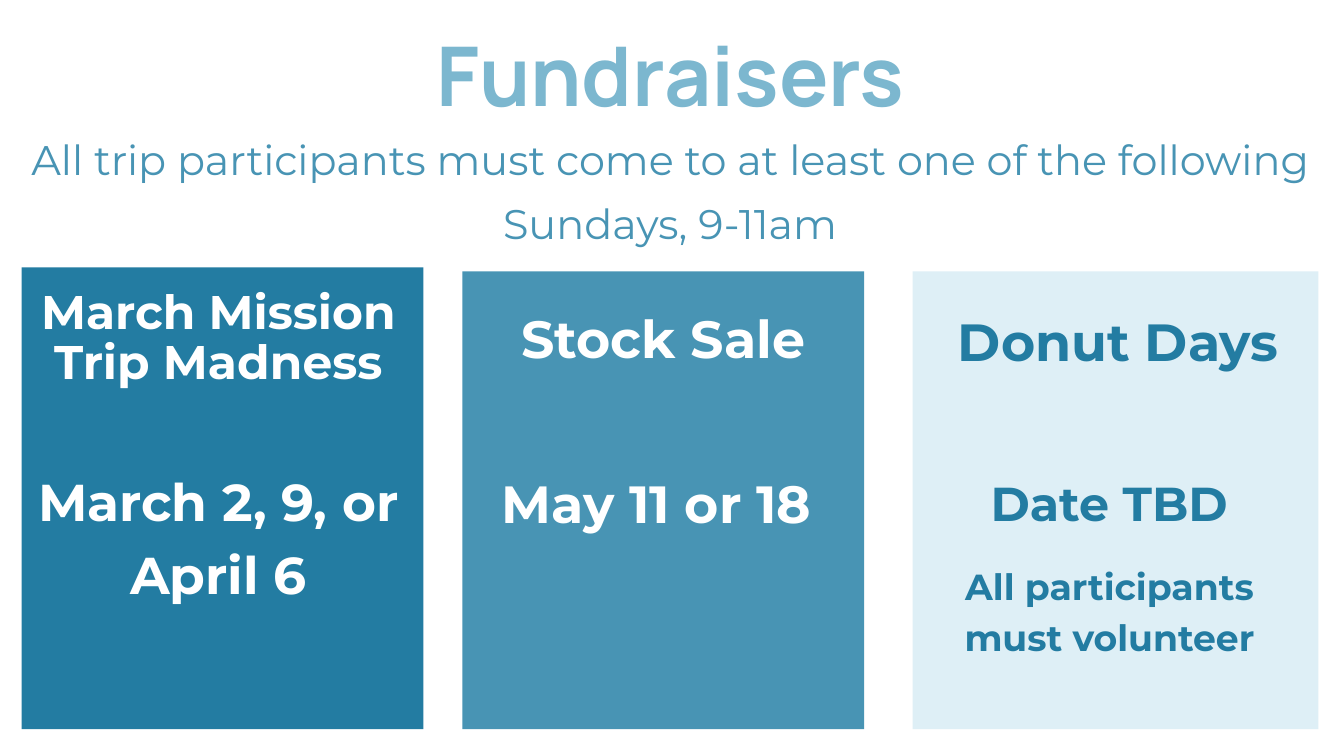
import pptx
import pptx.util
from pptx.dml.color import RGBColor
from pptx.enum.shapes import MSO_SHAPE
from pptx.enum.text import MSO_ANCHOR, PP_ALIGN

Inches, Pt = pptx.util.Inches, pptx.util.Pt

DEEP = RGBColor(0x23, 0x7C, 0xA2)
MID = RGBColor(0x48, 0x94, 0xB4)
SOFT = RGBColor(0x7C, 0xB7, 0xCF)
PALE = RGBColor(0xDE, 0xEF, 0xF6)
WHITE = RGBColor(0xFF, 0xFF, 0xFF)

TITLE = "Fundraisers"
SUBTITLE = ("All trip participants must come to at least one of the following "
            "Sundays, 9-11am")

# Each text: wording, box (left, top, width, height), size and line spacing in points
CARDS = [
    {"left": 0.32, "top": 3.98, "width": 5.98, "fill": DEEP, "color": WHITE,
     "texts": [
         ("March Mission Trip Madness", (0.2, 4.32, 6.1, 1.5), 50.5, 52.6),
         ("March 2, 9, or April 6", (0.2, 6.84, 6.1, 2.11), 55.5, 77.8),
     ]},
    {"left": 6.88, "top": 4.04, "width": 5.98, "fill": MID, "color": WHITE,
     "texts": [
         ("Stock Sale", (6.98, 4.59, 5.78, 0.91), 56, 65),
         ("May 11 or 18", (6.88, 6.86, 5.78, 1.05), 56, 78.4),
     ]},
    {"left": 13.58, "top": 4.04, "width": 6.04, "fill": PALE, "color": DEEP,
     "texts": [
         ("Donut Days", (13.66, 4.44, 5.96, 1.05), 56, 78.4),
         ("Date TBD", (12.76, 6.91, 7.49, 0.96), 51, 71.4),
         ("All participants must volunteer", (13.66, 8.29, 5.7, 1.48), 38.8, 54.3),
     ]},
]
CARD_BOTTOM = 10.85


def add_text(slide, text, box, *, size, spacing, color, font="Montserrat", bold=True):
    tf = slide.shapes.add_textbox(*map(Inches, box)).text_frame
    tf.word_wrap = True
    tf.vertical_anchor = MSO_ANCHOR.TOP
    tf.margin_left = tf.margin_right = tf.margin_top = tf.margin_bottom = 0
    p = tf.paragraphs[0]
    p.alignment = PP_ALIGN.CENTER
    p.line_spacing = Pt(spacing)
    r = p.add_run()
    r.text = text
    r.font.name = font
    r.font.size = Pt(size)
    r.font.bold = bold
    r.font.color.rgb = color


def add_card(slide, card):
    sp = slide.shapes.add_shape(
        MSO_SHAPE.RECTANGLE, Inches(card["left"]), Inches(card["top"]),
        Inches(card["width"]), Inches(CARD_BOTTOM - card["top"]))
    sp.shadow.inherit = False
    sp.fill.solid()
    sp.fill.fore_color.rgb = card["fill"]
    sp.line.fill.background()


def main():
    prs = pptx.Presentation()
    prs.slide_width, prs.slide_height = Inches(20), Inches(11.25)
    slide = prs.slides.add_slide(prs.slide_layouts[6])

    for card in CARDS:
        add_card(slide, card)

    add_text(slide, TITLE, (1.07, 0.11, 17.81, 1.74),
             size=88.2, spacing=123.5, color=SOFT, font="Manrope")
    add_text(slide, SUBTITLE, (0.32, 1.8, 19.3, 1.83),
             size=44.3, spacing=67.8, color=MID, bold=False)
    for card in CARDS:
        for text, box, size, spacing in card["texts"]:
            add_text(slide, text, box, size=size, spacing=spacing, color=card["color"])

    prs.save("out.pptx")


if __name__ == "__main__":
    main()
